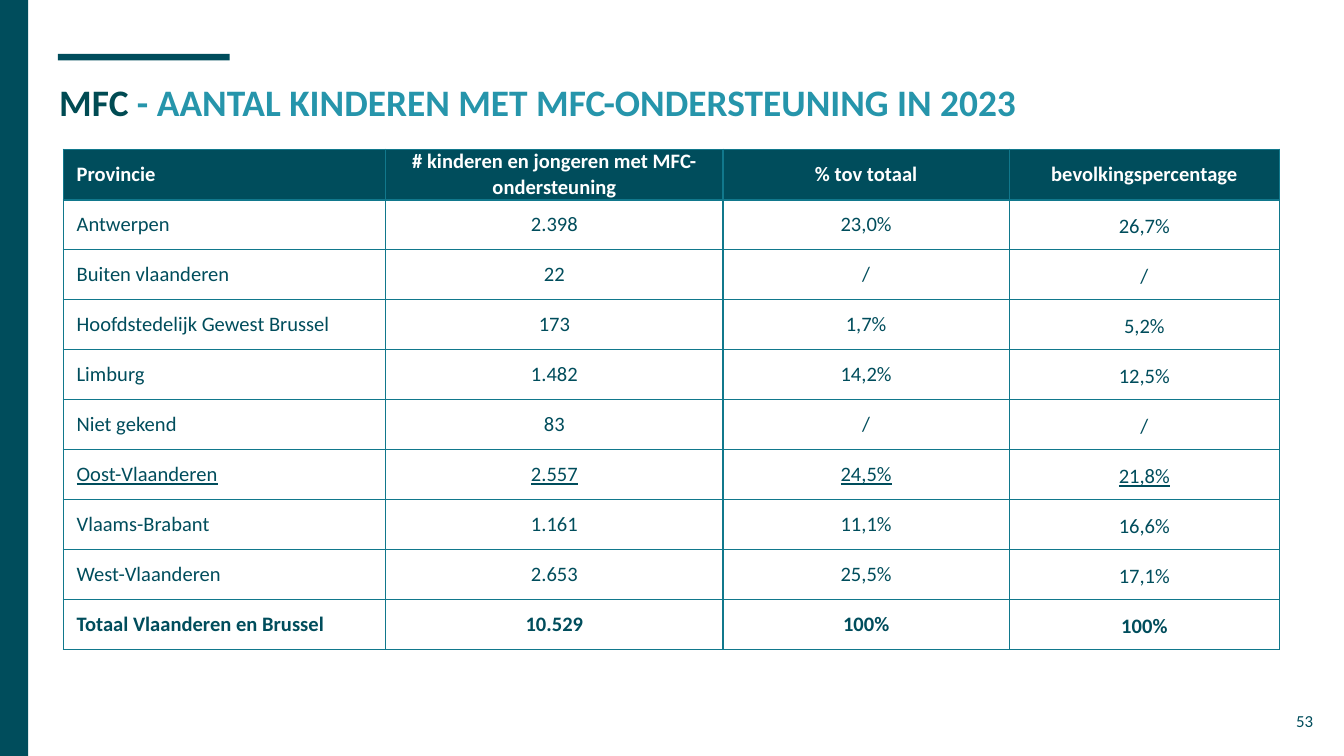
import pptx
import pptx.util
import pptx.dml.color
import pptx.enum.shapes
import pptx.enum.text
import pptx.oxml
import pptx.oxml.ns

Inches = pptx.util.Inches
Align = pptx.enum.text.PP_ALIGN
Anchor = pptx.enum.text.MSO_ANCHOR

TEAL = "004D5C"
WIDTHS = [2.4, 2.51, 2.13, 2.01]
ROWS = [
    ["Provincie", "# kinderen en jongeren met MFC-ondersteuning",
     "% tov totaal", "bevolkingspercentage"],
    ["Antwerpen", "2.398", "23,0%", "26,7%"],
    ["Buiten vlaanderen", "22", "/", "/"],
    ["Hoofdstedelijk Gewest Brussel", "173", "1,7%", "5,2%"],
    ["Limburg", "1.482", "14,2%", "12,5%"],
    ["Niet gekend", "83", "/", "/"],
    ["Oost-Vlaanderen", "2.557", "24,5%", "21,8%"],
    ["Vlaams-Brabant", "1.161", "11,1%", "16,6%"],
    ["West-Vlaanderen", "2.653", "25,5%", "17,1%"],
    ["Totaal Vlaanderen en Brussel", "10.529", "100%", "100%"],
]


def color(code):
    return pptx.dml.color.RGBColor.from_string(code)


def style(run, size, code, bold=False, under=False):
    font = run.font
    font.name = "Calibri"
    font.size = pptx.util.Pt(size)
    font.color.rgb = color(code)
    font.bold = bold
    font.underline = under


def inset(frame):
    frame.word_wrap = True
    frame.auto_size = pptx.enum.text.MSO_AUTO_SIZE.NONE
    frame.vertical_anchor = Anchor.TOP
    frame.margin_left = frame.margin_right = Inches(0.1)
    frame.margin_top = frame.margin_bottom = Inches(0.1)


def add_bar(slide, left, top, width, height):
    kind = pptx.enum.shapes.MSO_SHAPE.RECTANGLE
    bar = slide.shapes.add_shape(kind, left, top, width, height)
    bar.shadow.inherit = False
    bar.fill.solid()
    bar.fill.fore_color.rgb = color(TEAL)
    bar.line.fill.background()


def set_title(slide):
    title = slide.shapes.title
    title.left, title.top = Inches(0.34), Inches(0.49)
    title.width, title.height = Inches(9.32), Inches(0.63)
    inset(title.text_frame)
    para = title.text_frame.paragraphs[0]
    para.alignment = Align.LEFT
    parts = [("MFC ", "004B53"),
             ("- AANTAL KINDEREN MET MFC-ONDERSTEUNING IN 2023", "2695AB")]
    for text, code in parts:
        run = para.add_run()
        run.text = text
        style(run, 20, code, bold=True)


def add_number(slide, text):
    box = slide.shapes.add_textbox(
        Inches(9.27), Inches(5.19), Inches(0.6), Inches(0.43))
    inset(box.text_frame)
    para = box.text_frame.paragraphs[0]
    para.text = text
    para.alignment = Align.RIGHT
    style(para.runs[0], 9, TEAL)


def add_edges(cell):
    props = cell._tc.get_or_add_tcPr()
    names = pptx.oxml.ns.nsdecls("a")
    for spot, side in enumerate("LRTB"):
        edge = pptx.oxml.parse_xml(
            f'<a:ln{side} {names} w="9525" cap="flat" cmpd="sng">'
            f'<a:solidFill><a:srgbClr val="11788C"/></a:solidFill>'
            f'<a:prstDash val="solid"/></a:ln{side}>')
        props.insert(spot, edge)


def fill_cell(cell, text, row, col):
    head = row == 0
    last = row == len(ROWS) - 1
    cell.vertical_anchor = Anchor.MIDDLE
    cell.margin_left = cell.margin_right = Inches(0.1)
    cell.margin_top = cell.margin_bottom = 0
    if head:
        cell.fill.solid()
        cell.fill.fore_color.rgb = color(TEAL)
    else:
        cell.fill.background()
    add_edges(cell)
    para = cell.text_frame.paragraphs[0]
    para.text = text
    para.alignment = Align.CENTER if col else Align.LEFT
    if col == 3 and not head:
        para.line_spacing = 1.15
    style(para.runs[0], 11, "FFFFFF" if head else TEAL,
          bold=head or last, under=ROWS[row][0] == "Oost-Vlaanderen")


def add_grid(slide):
    frame = slide.shapes.add_table(
        len(ROWS), len(WIDTHS), Inches(0.47), Inches(1.11),
        Inches(sum(WIDTHS)), Inches(3.72))
    table = frame.table
    table.horz_banding = False
    for col, width in enumerate(WIDTHS):
        table.columns[col].width = Inches(width)
    for row, texts in enumerate(ROWS):
        for col, text in enumerate(texts):
            fill_cell(table.cell(row, col), text, row, col)


def main():
    deck = pptx.Presentation()
    deck.slide_width = Inches(10)
    deck.slide_height = Inches(10 * 9 / 16)
    slide = deck.slides.add_slide(deck.slide_layouts[5])
    add_bar(slide, Inches(0.43), Inches(0.4), Inches(1.28), Inches(0.05))
    add_bar(slide, 0, 0, Inches(0.21), deck.slide_height)
    set_title(slide)
    add_number(slide, "53")
    add_grid(slide)
    deck.save("out.pptx")


if __name__ == "__main__":
    main()
